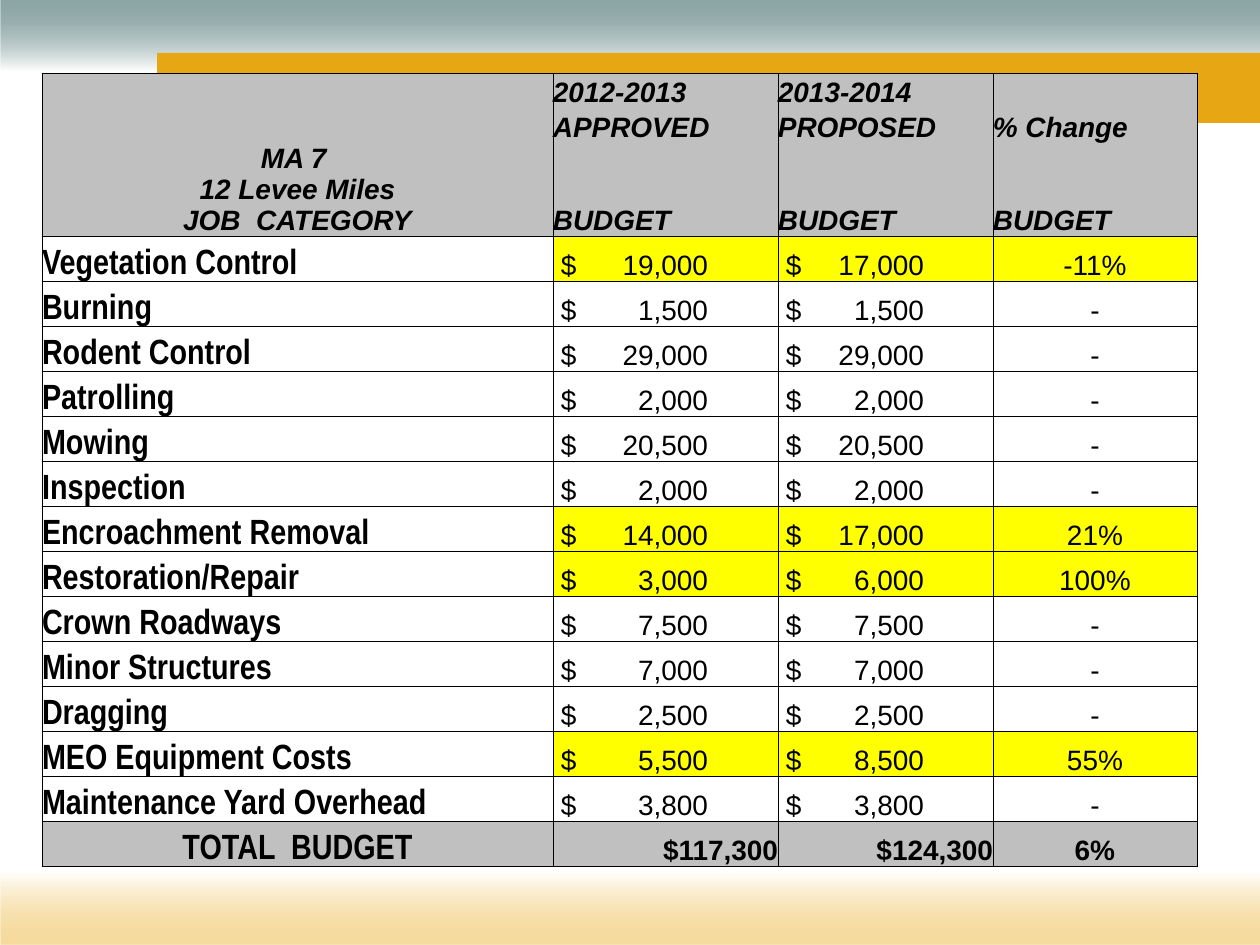
"""Build the levee maintenance budget slide."""
from lxml import etree
from pptx import Presentation
from pptx import util as u
from pptx.dml.color import RGBColor
from pptx.enum import shapes, text
from pptx.oxml.ns import qn

PX = 914400 // 126
HUES = {"teal": "215352", "gold": "EEB840", "band": "E7A614", "white": "FFFFFF",
        "black": "000000", "gray": "C0C0C0", "ash": "BFBFBF", "mark": "FFFF00"}
COLS = [511, 225, 215, 204]
HEAD, ROW = 35, 45
TABS = {1: 147, 2: 138}
LEFT, MID, RIGHT = text.PP_ALIGN.LEFT, text.PP_ALIGN.CENTER, text.PP_ALIGN.RIGHT
TITLE = {"name": "Arial", "size": u.Pt(16), "bold": True, "italic": True}
LABEL = {"name": "Arial Narrow", "size": u.Pt(20), "bold": True}
VALUE = {"name": "Arial", "size": u.Pt(16), "bold": False}
TOTAL = {"name": "Arial", "size": u.Pt(16), "bold": True}
JOBS = [
    ("Vegetation Control", "19,000", "17,000", "-11%"),
    ("Burning", "1,500", "1,500", "-"),
    ("Rodent Control", "29,000", "29,000", "-"),
    ("Patrolling", "2,000", "2,000", "-"),
    ("Mowing", "20,500", "20,500", "-"),
    ("Inspection", "2,000", "2,000", "-"),
    ("Encroachment Removal", "14,000", "17,000", "21%"),
    ("Restoration/Repair", "3,000", "6,000", "100%"),
    ("Crown Roadways", "7,500", "7,500", "-"),
    ("Minor Structures", "7,000", "7,000", "-"),
    ("Dragging", "2,500", "2,500", "-"),
    ("MEO Equipment Costs", "5,500", "8,500", "55%"),
    ("Maintenance Yard Overhead", "3,800", "3,800", "-"),
]
HEADS = [("2012-2013", "2013-2014", ""), ("APPROVED", "PROPOSED", "% Change"),
         ("BUDGET", "BUDGET", "BUDGET")]


def hue(name):
    return RGBColor.from_string(HUES[name])


def add_bar(slide, *box):
    bar = slide.shapes.add_shape(shapes.MSO_SHAPE.RECTANGLE, *(n * PX for n in box))
    bar.shadow.inherit = False
    bar.line.fill.background()
    return bar


def add_fade(slide, box, name, angle):
    bar = add_bar(slide, *box)
    bar.fill.gradient()
    bar.fill.gradient_angle = angle
    for stop, tone, place in zip(bar.fill.gradient_stops, (name, "white"), (0, 0.52)):
        stop.color.rgb = hue(tone)
        stop.position = place
    tint = next(bar.fill._xPr.iter(qn("a:srgbClr")))
    etree.SubElement(tint, qn("a:alpha"), val="51000")


def set_edges(cell, sides):
    props = cell._tc.get_or_add_tcPr()
    for spot, side in enumerate("LRTB"):
        line = etree.Element(qn("a:ln" + side), w=str(u.Pt(0.5)))
        if side in sides:
            fill = etree.SubElement(line, qn("a:solidFill"))
            etree.SubElement(fill, qn("a:srgbClr"), val=HUES["black"])
        else:
            etree.SubElement(line, qn("a:noFill"))
        props.insert(spot, line)


def style_cell(cell, fill=None, sides="LRTB"):
    cell.vertical_anchor = text.MSO_ANCHOR.BOTTOM
    cell.margin_left = cell.margin_right = cell.margin_top = cell.margin_bottom = 0
    if fill:
        cell.fill.solid()
        cell.fill.fore_color.rgb = hue(fill)
    else:
        cell.fill.background()
    set_edges(cell, sides)


def write(cell, lines, fmt, align=LEFT):
    frame = cell.text_frame
    for num, line in enumerate(lines):
        para = frame.add_paragraph() if num else frame.paragraphs[0]
        para.alignment = align
        run = para.add_run()
        run.text = line
        run.font.color.rgb = hue("black")
        for key, val in fmt.items():
            setattr(run.font, key, val)


def write_sum(cell, amount, tab):
    cell.margin_left = 8 * PX
    para = cell.text_frame.paragraphs[0]
    stops = etree.SubElement(para._p.get_or_add_pPr(), qn("a:tabLst"))
    etree.SubElement(stops, qn("a:tab"), pos=str(tab * PX), algn="r")
    write(cell, ["$\t" + amount], VALUE)


def fill_head(grid):
    for row, names in enumerate(HEADS):
        sides = "LR" + ("T", "", "B")[row]
        style_cell(grid.cell(row, 0), "gray", sides if row else "LRTB")
        for col, name in enumerate(names, 1):
            cell = grid.cell(row, col)
            style_cell(cell, "gray", sides)
            write(cell, [name], TITLE)
    corner = grid.cell(0, 0)
    corner.merge(grid.cell(2, 0))
    write(corner, ["MA 7 ", "12 Levee Miles", "JOB  CATEGORY"], TITLE, MID)


def fill_jobs(grid):
    for row, (job, *sums, change) in enumerate(JOBS, len(HEADS)):
        mark = None if change == "-" else "mark"
        for col in range(len(COLS)):
            style_cell(grid.cell(row, col), mark if col else None)
        write(grid.cell(row, 0), [job], LABEL)
        for col, amount in enumerate(sums, 1):
            write_sum(grid.cell(row, col), amount, TABS[col])
        write(grid.cell(row, 3), [change], VALUE, MID)


def fill_total(grid):
    row = len(HEADS) + len(JOBS)
    parts = [("TOTAL  BUDGET", LABEL, MID, "gray"), ("$117,300", TOTAL, RIGHT, "gray"),
             ("$124,300", TOTAL, RIGHT, "gray"), ("6%", TOTAL, MID, "ash")]
    for col, (words, fmt, align, fill) in enumerate(parts):
        style_cell(grid.cell(row, col), fill)
        write(grid.cell(row, col), [words], fmt, align)


def add_budget(slide):
    highs = [HEAD] * len(HEADS) + [ROW] * (len(JOBS) + 1)
    box = (42, 73, sum(COLS), sum(highs))
    grid = slide.shapes.add_table(len(highs), len(COLS), *(n * PX for n in box)).table
    grid.first_row = grid.horz_banding = False
    for col, wide in zip(grid.columns, COLS):
        col.width = wide * PX
    for row, high in zip(grid.rows, highs):
        row.height = high * PX
    fill_head(grid)
    fill_jobs(grid)
    fill_total(grid)


def main():
    deck = Presentation()
    deck.slide_width, deck.slide_height = 1260 * PX, 945 * PX
    slide = deck.slides.add_slide(deck.slide_layouts[6])
    add_fade(slide, (1, 0, 1259, 137), "teal", 270)
    band = add_bar(slide, 157, 53, 1103, 70)
    band.fill.solid()
    band.fill.fore_color.rgb = hue("band")
    add_fade(slide, (1, 805, 1259, 140), "gold", 90)
    add_budget(slide)
    deck.save("out.pptx")


if __name__ == "__main__":
    main()
